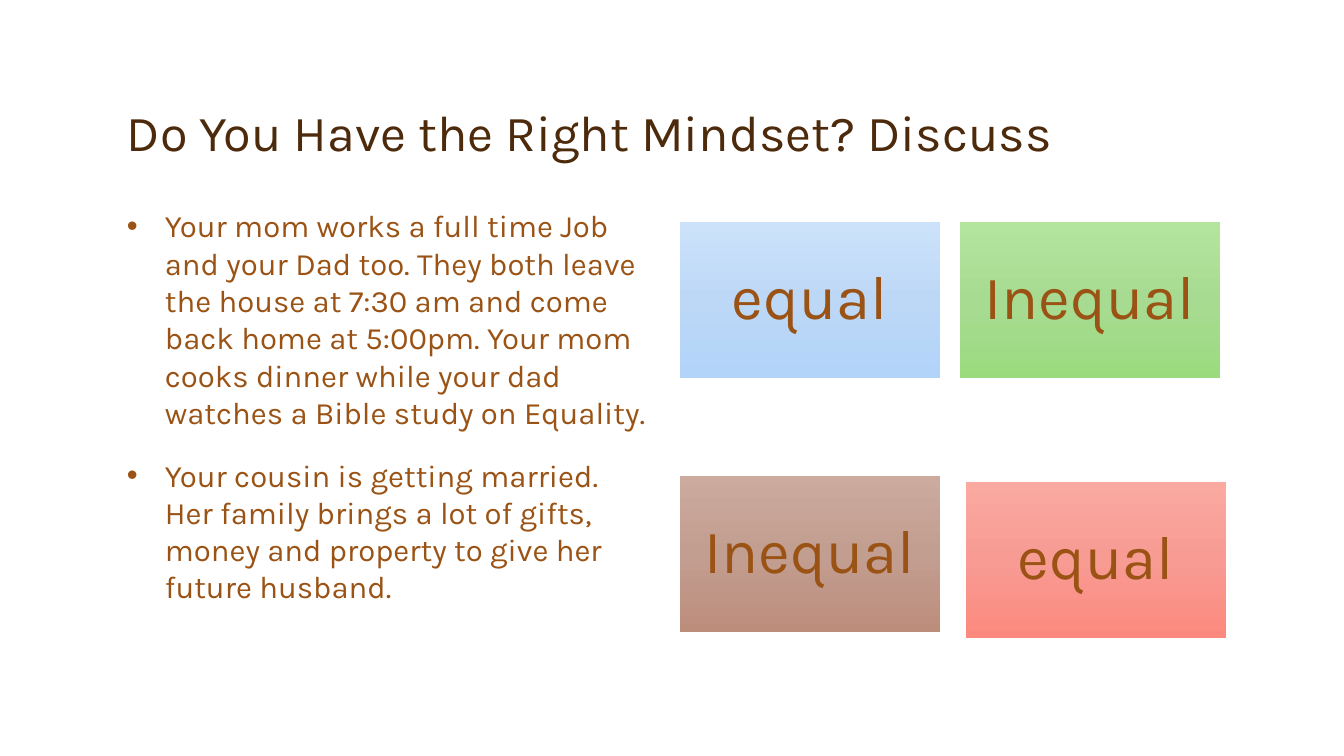
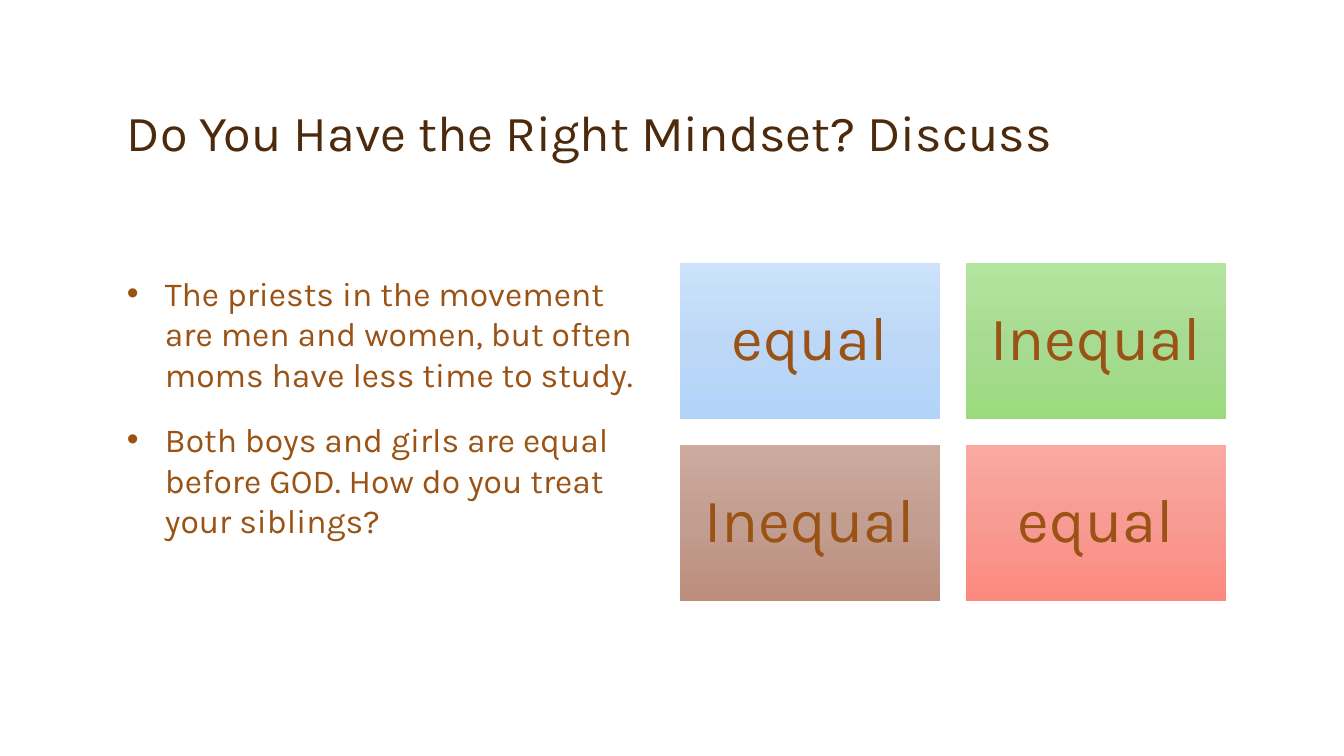
from copy import deepcopy
from dataclasses import dataclass

from lxml.etree import SubElement
from pptx import Presentation
from pptx.dml.color import RGBColor
from pptx.enum.shapes import MSO_SHAPE as Shape
from pptx.enum.text import MSO_ANCHOR as Anchor, PP_ALIGN as Align
from pptx.oxml.ns import qn
from pptx.util import Pt

PX = 914400 / 100.8  # EMU in one px


@dataclass(frozen=True)
class Theme:
    font: str = "Karla"
    title: str = "4D2A0B"
    text: str = "9A5315"
    title_size: float = 36
    card_size: float = 44
    tight: float = 0.9
    bullet_gap: float = 18


THEME = Theme()
SLIDE_SIZE = (1344, 756)
TITLE = "Do You Have the Right Mindset? Discuss"
TITLE_BOX = (117, 33, 1109, 134)
BODY_LEFT, BODY_WIDTH, BODY_BOTTOM = 117, 546, 664
BULLET_INDENT = 38
CARD_SIZE = (260, 156)
CARD_INSET = 18
GRID_LEFT, GRID_GAP = 680, 26

# Answer, gradient from top to bottom
CARDS = [
    ("equal", ("CCE2FA", "BDD8F7", "B2D4F9")),
    ("Inequal", ("B4E59F", "A8DB92", "9BDB7E")),
    ("Inequal", ("CDAA9E", "C29E91", "BD8D7C")),
    ("equal", ("FAA9A1", "F89B93", "FC897E")),
]

# "nudges" moves a card, by its index, off the regular grid
SLIDES = [
    {
        "bullets": [
            "Your mom works a full time Job and your Dad too. They both leave "
            "the house at 7:30 am and come back home at 5:00pm. Your mom cooks "
            "dinner while your dad watches a Bible study on Equality.",
            "Your cousin is getting married. Her family brings a lot of gifts, "
            "money and property to give her future husband.",
        ],
        "size": 22.2, "body_top": 202, "grid_top": 222, "row_gap": 98,
        "nudges": {1: (-6, 0), 3: (0, 6)},
    },
    {
        "bullets": [
            "The priests in the movement are men and women, but often moms "
            "have less time to study.",
            "Both boys and girls are equal before GOD. How do you treat your "
            "siblings?",
        ],
        "size": 24, "body_top": 268, "grid_top": 263, "row_gap": GRID_GAP,
        "nudges": {},
    },
]


def px(n):
    return round(n * PX)


def write(p, text, size, color, **layout):
    for name, value in layout.items():
        setattr(p, name, value)
    r = p.add_run()
    r.text = text
    r.font.name = THEME.font
    r.font.size = Pt(size)
    r.font.color.rgb = RGBColor.from_string(color)


def add_text_frame(s, box):
    tf = s.shapes.add_textbox(*map(px, box)).text_frame
    tf.word_wrap = True
    return tf


def add_title(s):
    tf = add_text_frame(s, TITLE_BOX)
    tf.vertical_anchor = Anchor.BOTTOM
    write(tf.paragraphs[0], TITLE, THEME.title_size, THEME.title,
          line_spacing=THEME.tight)


def set_bullet(p):
    pPr = p._p.get_or_add_pPr()
    pPr.set("marL", str(px(BULLET_INDENT)))
    pPr.set("indent", str(-px(BULLET_INDENT)))
    SubElement(pPr, qn("a:buFont")).set("typeface", "Arial")
    SubElement(pPr, qn("a:buChar")).set("char", "•")


def add_bullets(s, bullets, size, top):
    tf = add_text_frame(s, (BODY_LEFT, top, BODY_WIDTH, BODY_BOTTOM - top))
    for i, text in enumerate(bullets):
        p = tf.add_paragraph() if i else tf.paragraphs[0]
        set_bullet(p)
        write(p, text, size, THEME.text,
              space_before=Pt(THEME.bullet_gap if i else 0))


def fill_gradient(shape, colors):
    """Fill from top to bottom with three evenly spaced colours."""
    fill = shape.fill
    fill.gradient()
    fill.gradient_angle = 270
    stops = shape._element.spPr.find(".//" + qn("a:gsLst"))
    stops.insert(1, deepcopy(stops[0]))
    for i, (stop, color) in enumerate(zip(fill.gradient_stops, colors)):
        stop.position = i / 2
        stop.color.rgb = RGBColor.from_string(color)


def add_card(s, left, top, text, colors):
    sp = s.shapes.add_shape(Shape.RECTANGLE, *map(px, (left, top, *CARD_SIZE)))
    sp.shadow.inherit = False
    sp.line.fill.background()
    fill_gradient(sp, colors)
    tf = sp.text_frame
    tf.word_wrap = True
    tf.vertical_anchor = Anchor.MIDDLE
    for side in ("left", "top", "right", "bottom"):
        setattr(tf, f"margin_{side}", px(CARD_INSET))
    write(tf.paragraphs[0], text, THEME.card_size, THEME.text,
          alignment=Align.CENTER, line_spacing=THEME.tight)


def add_cards(s, grid_top, row_gap, nudges):
    width, height = CARD_SIZE
    for i, (text, colors) in enumerate(CARDS):
        row, col = divmod(i, 2)
        dx, dy = nudges.get(i, (0, 0))
        add_card(s, GRID_LEFT + col * (width + GRID_GAP) + dx,
                 grid_top + row * (height + row_gap) + dy, text, colors)


def main():
    prs = Presentation()
    prs.slide_width, prs.slide_height = map(px, SLIDE_SIZE)
    for content in SLIDES:
        s = prs.slides.add_slide(prs.slide_layouts[6])
        add_title(s)
        add_bullets(s, content["bullets"], content["size"], content["body_top"])
        add_cards(s, content["grid_top"], content["row_gap"], content["nudges"])
    prs.save("out.pptx")


if __name__ == "__main__":
    main()
